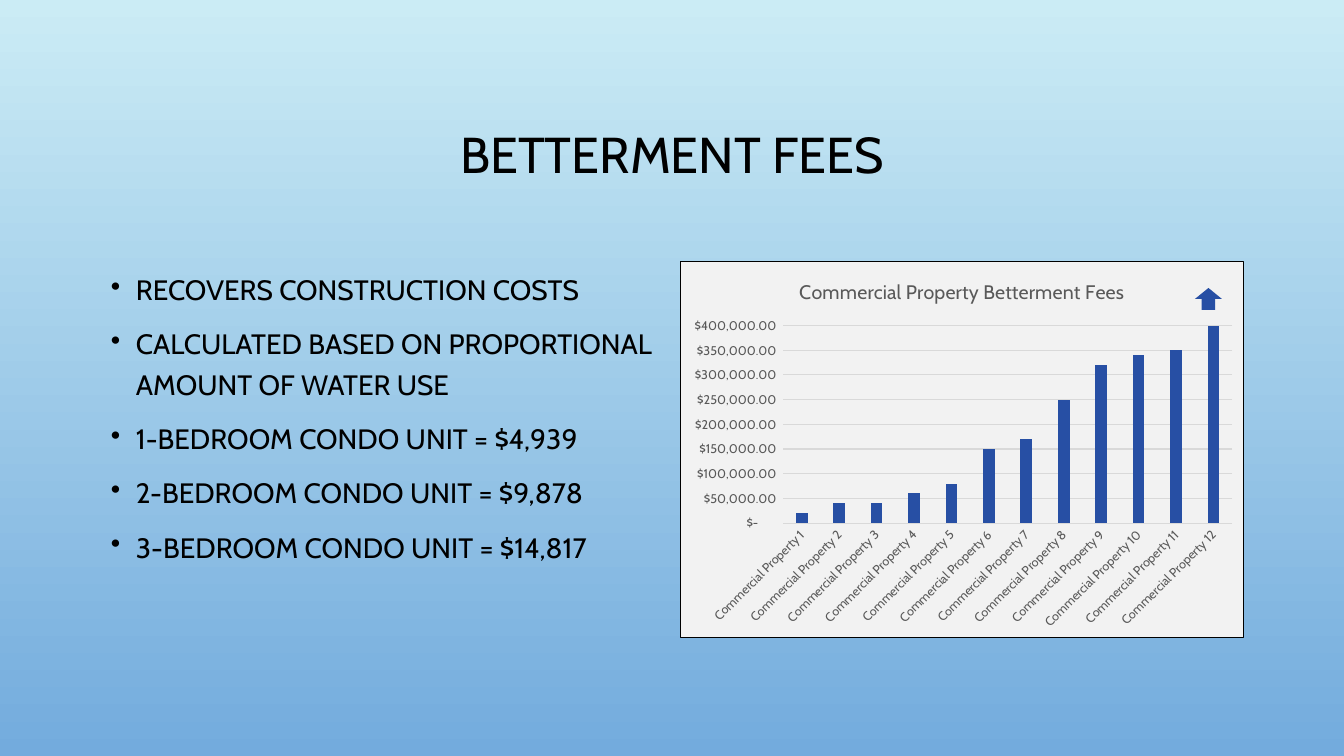
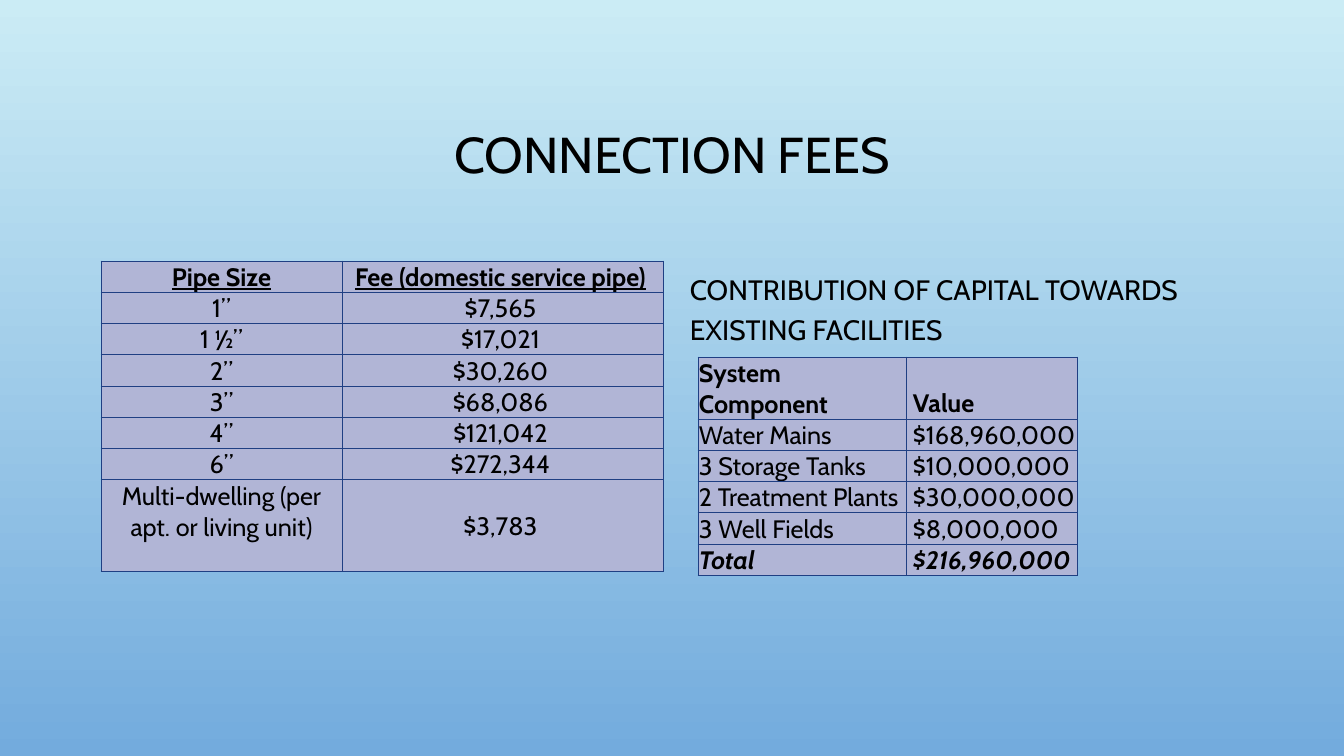
from dataclasses import dataclass, field
from typing import NamedTuple

from pptx import Presentation
from pptx.chart.data import CategoryChartData
from pptx.dml.color import RGBColor
from pptx.enum.chart import XL_CHART_TYPE, XL_TICK_MARK
from pptx.enum.shapes import MSO_SHAPE
from pptx.enum.text import MSO_ANCHOR, PP_ALIGN
from pptx.oxml import parse_xml
from pptx.oxml.ns import nsdecls, qn
from pptx.util import Emu, Pt

COLUMN = XL_CHART_TYPE.COLUMN_CLUSTERED
NO_TICK = XL_TICK_MARK.NONE
UP_ARROW = MSO_SHAPE.UP_ARROW
TOP, MIDDLE, BOTTOM = MSO_ANCHOR.TOP, MSO_ANCHOR.MIDDLE, MSO_ANCHOR.BOTTOM
LEFT, CENTER = PP_ALIGN.LEFT, PP_ALIGN.CENTER

SLIDE_W, SLIDE_H = 1344, 756
EMU_PER_PX = 12192000 / SLIDE_W


@dataclass(frozen=True)
class Theme:
    font: str = "Cabin"
    text: str = "000000"
    sky: str = "CBECF5"
    water: str = "73ABDD"
    accent: str = "274FA4"
    cell: str = "B1B5D6"
    cell_line: str = "1F3F83"
    chart_fill: str = "F2F2F2"
    chart_text: str = "595959"
    grid: str = "D9D9D9"
    title_size: int = 36
    body_size: int = 20
    table_size: int = 18
    chart_title_size: int = 14
    axis_size: int = 9
    line: float = 0.75


THEME = Theme()


class Box(NamedTuple):
    left: int
    top: int
    width: int
    height: int


class Column(NamedTuple):
    width: int
    inset_left: int
    inset_right: int


@dataclass(frozen=True)
class TableSpec:
    left: int
    top: int
    columns: list[Column]
    heights: list[int]
    rows: list[tuple[str, str]]
    align: PP_ALIGN
    anchor: MSO_ANCHOR
    # Font emphasis by row, and anchors of single cells
    row_style: dict[int, dict] = field(default_factory=dict)
    cell_anchor: dict[tuple[int, int], MSO_ANCHOR] = field(default_factory=dict)


TITLE = Box(101, 69, 1142, 176)
LEFT_HALF = Box(101, 261, 564, 377)
RIGHT_HALF = Box(680, 261, 564, 377)
ARROW = Box(1195, 288, 27, 22)
BULLET_INDENT = 25
ROW_H = 31

BETTERMENT_POINTS = [
    "RECOVERS CONSTRUCTION COSTS",
    "CALCULATED BASED ON PROPORTIONAL AMOUNT OF WATER USE",
    "1-BEDROOM CONDO UNIT = $4,939",
    "2-BEDROOM CONDO UNIT = $9,878",
    "3-BEDROOM CONDO UNIT = $14,817",
]
BETTERMENT_FEES = [20000, 40000, 40000, 60000, 80000, 150000,
                   170000, 250000, 320000, 340000, 350000, 1800000]
DOLLARS = '_("$"* #,##0.00_);_("$"* \\(#,##0.00\\);_("$"* "-"??_);_(@_)'

PIPE_FEES = TableSpec(
    left=101, top=261,
    columns=[Column(241, 4, 4), Column(322, 4, 9)],
    heights=[ROW_H] * 7 + [92],
    rows=[
        ("Pipe Size", "Fee (domestic service pipe)"),
        ("1”", "$7,565"),
        ("1 ½”", "$17,021"),
        ("2”", "$30,260"),
        ("3”", "$68,086"),
        ("4”", "$121,042"),
        ("6”", "$272,344"),
        ("Multi-dwelling (per apt. or living unit)", "$3,783"),
    ],
    align=CENTER, anchor=MIDDLE,
    row_style={0: dict(bold=True, underline=True)},
    cell_anchor={(7, 0): TOP},
)
SYSTEM_VALUE = TableSpec(
    left=698, top=357,
    columns=[Column(209, 1, 1), Column(171, 6, 1)],
    heights=[2 * ROW_H] + [ROW_H] * 5,
    rows=[
        ("System Component", "Value"),
        ("Water Mains", "$168,960,000"),
        ("3 Storage Tanks", "$10,000,000"),
        ("2 Treatment Plants", "$30,000,000"),
        ("3 Well Fields", "$8,000,000"),
        ("Total", "$216,960,000"),
    ],
    align=LEFT, anchor=BOTTOM,
    row_style={0: dict(bold=True), 5: dict(bold=True, italic=True)},
)


def px(n: int) -> Emu:
    return Emu(round(n * EMU_PER_PX))


def place(box: Box) -> list[Emu]:
    return [px(n) for n in box]


def rgb(color: str) -> RGBColor:
    return RGBColor.from_string(color)


def style_font(font, size: int, color: str = THEME.text, bold: bool = False,
               italic: bool = False, underline: bool = False) -> None:
    font.name, font.size = THEME.font, Pt(size)
    font.color.rgb = rgb(color)
    font.bold, font.italic, font.underline = bold, italic, underline


def add_bullet(p) -> None:
    pPr = p._p.get_or_add_pPr()
    pPr.set("marL", str(px(BULLET_INDENT)))
    pPr.set("indent", str(-px(BULLET_INDENT)))
    pPr.append(parse_xml(f'<a:buClr {nsdecls("a")}><a:srgbClr val="{THEME.text}"/></a:buClr>'))
    pPr.append(parse_xml(f'<a:buChar {nsdecls("a")} char="•"/>'))


def write(tf, *texts: str, size: int, align: PP_ALIGN = LEFT, spacing: float = 1.0,
          before: int = 0, bullet: bool = False, **font) -> None:
    """Fill a text frame with one paragraph for each text."""
    tf.word_wrap = True
    for i, text in enumerate(texts):
        p = tf.add_paragraph() if i else tf.paragraphs[0]
        if bullet:
            add_bullet(p)
        p.alignment, p.line_spacing = align, spacing
        if i and before:
            p.space_before = Pt(before)
        r = p.add_run()
        r.text = text
        style_font(r.font, size, **font)


def add_text(s, box: Box, *texts: str, anchor: MSO_ANCHOR = TOP, **fmt) -> None:
    tf = s.shapes.add_textbox(*place(box)).text_frame
    tf.vertical_anchor = anchor
    write(tf, *texts, **fmt)


def add_body(s, box: Box, *texts: str, bullet: bool = False) -> None:
    add_text(s, box, *texts, size=THEME.body_size, spacing=1.2, before=10, bullet=bullet)


def add_titled_slide(prs, title: str):
    s = prs.slides.add_slide(prs.slide_layouts[6])
    add_text(s, TITLE, title, anchor=MIDDLE, size=THEME.title_size,
             align=CENTER, spacing=0.9)
    return s


def set_background(master) -> None:
    fill = master.background.fill
    fill.gradient()
    fill.gradient_angle = 270
    for stop, color, position in zip(fill.gradient_stops, (THEME.sky, THEME.water), (0, 1)):
        stop.color.rgb = rgb(color)
        stop.position = position


def line_xml(tag: str, color: str) -> str:
    return (f'<a:{tag} {nsdecls("a")} w="{Pt(THEME.line)}"><a:solidFill>'
            f'<a:srgbClr val="{color}"/></a:solidFill></a:{tag}>')


def add_fee_table(s, spec: TableSpec) -> None:
    box = Box(spec.left, spec.top, sum(c.width for c in spec.columns), sum(spec.heights))
    table = s.shapes.add_table(len(spec.rows), len(spec.columns), *place(box)).table
    table.first_row = table.horz_banding = False
    for column, col in zip(table.columns, spec.columns):
        column.width = px(col.width)
    for i, (row, height, texts) in enumerate(zip(table.rows, spec.heights, spec.rows)):
        row.height = px(height)
        for j, (cell, col, text) in enumerate(zip(row.cells, spec.columns, texts)):
            cell.margin_left, cell.margin_right = px(col.inset_left), px(col.inset_right)
            cell.margin_top, cell.margin_bottom = px(1), px(0)
            cell.vertical_anchor = spec.cell_anchor.get((i, j), spec.anchor)
            # Borders come before the fill in the cell properties
            for side in ("lnL", "lnR", "lnT", "lnB"):
                cell._tc.get_or_add_tcPr().append(parse_xml(line_xml(side, THEME.cell_line)))
            cell.fill.solid()
            cell.fill.fore_color.rgb = rgb(THEME.cell)
            write(cell.text_frame, text, size=THEME.table_size, align=spec.align,
                  **spec.row_style.get(i, {}))


def style_line(line, color: str) -> None:
    line.color.rgb = rgb(color)
    line.width = Pt(THEME.line)


def add_fee_chart(s, box: Box) -> None:
    data = CategoryChartData()
    data.categories = [f"Commercial Property {n + 1}" for n in range(len(BETTERMENT_FEES))]
    data.add_series("Series 1", BETTERMENT_FEES)
    chart = s.shapes.add_chart(COLUMN, *place(box), data).chart
    style_font(chart.font, 10)
    chart.has_legend = False
    chart.has_title = True
    write(chart.chart_title.text_frame, "Commercial Property Betterment Fees",
          size=THEME.chart_title_size, align=CENTER, color=THEME.chart_text)
    chart.chart_title.include_in_layout = False

    # Columns
    plot = chart.plots[0]
    plot.vary_by_categories = False
    plot.gap_width, plot.overlap = 219, -27
    fill = plot.series[0].format.fill
    fill.solid()
    fill.fore_color.rgb = rgb(THEME.accent)

    # Axes
    cat, val = chart.category_axis, chart.value_axis
    for axis in (cat, val):
        axis.major_tick_mark = axis.minor_tick_mark = NO_TICK
        style_font(axis.tick_labels.font, THEME.axis_size, THEME.chart_text)
    style_line(cat.format.line, THEME.grid)
    cat._element.find(f'{qn("c:txPr")}/{qn("a:bodyPr")}').set("rot", "-2700000")
    val.minimum_scale, val.maximum_scale, val.major_unit = 0, 400000, 50000
    val.format.line.fill.background()
    style_line(val.major_gridlines.format.line, THEME.grid)
    val.tick_labels.number_format = DOLLARS
    val.tick_labels.number_format_is_linked = False

    # Chart area
    chart._chartSpace.find(qn("c:chart")).addnext(parse_xml(
        f'<c:spPr {nsdecls("c", "a")}><a:solidFill><a:srgbClr val="{THEME.chart_fill}"/>'
        f'</a:solidFill>{line_xml("ln", THEME.text)}</c:spPr>'))


def add_overflow_arrow(s, box: Box) -> None:
    arrow = s.shapes.add_shape(UP_ARROW, *place(box))
    arrow.shadow.inherit = False
    arrow.fill.solid()
    arrow.fill.fore_color.rgb = rgb(THEME.accent)
    arrow.line.fill.background()


def main() -> None:
    prs = Presentation()
    prs.slide_width, prs.slide_height = px(SLIDE_W), px(SLIDE_H)
    set_background(prs.slide_master)

    # Betterment fees
    s = add_titled_slide(prs, "BETTERMENT FEES")
    add_body(s, LEFT_HALF, *BETTERMENT_POINTS, bullet=True)
    add_fee_chart(s, RIGHT_HALF)
    add_overflow_arrow(s, ARROW)

    # Connection fees
    s = add_titled_slide(prs, "CONNECTION FEES")
    add_fee_table(s, PIPE_FEES)
    add_body(s, RIGHT_HALF, "CONTRIBUTION OF CAPITAL TOWARDS EXISTING FACILITIES")
    add_fee_table(s, SYSTEM_VALUE)

    prs.save("out.pptx")


if __name__ == "__main__":
    main()
